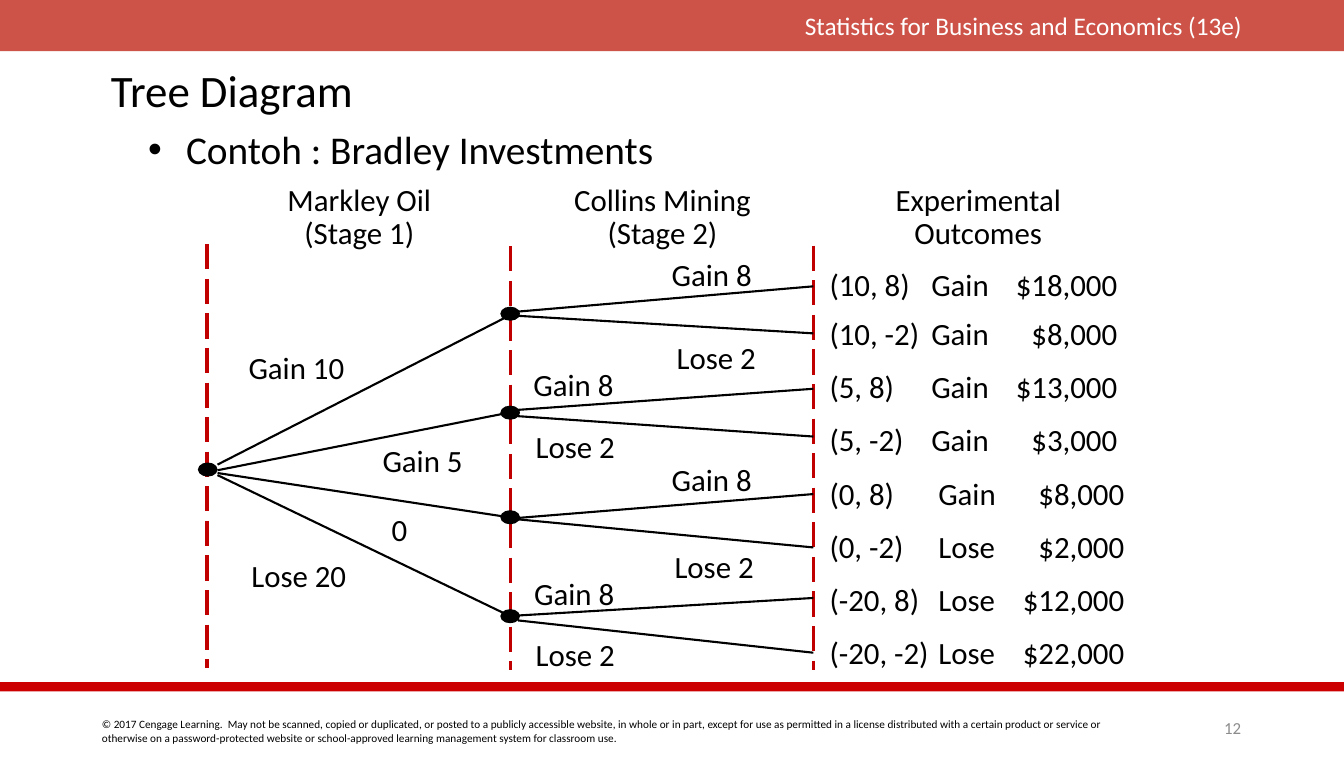
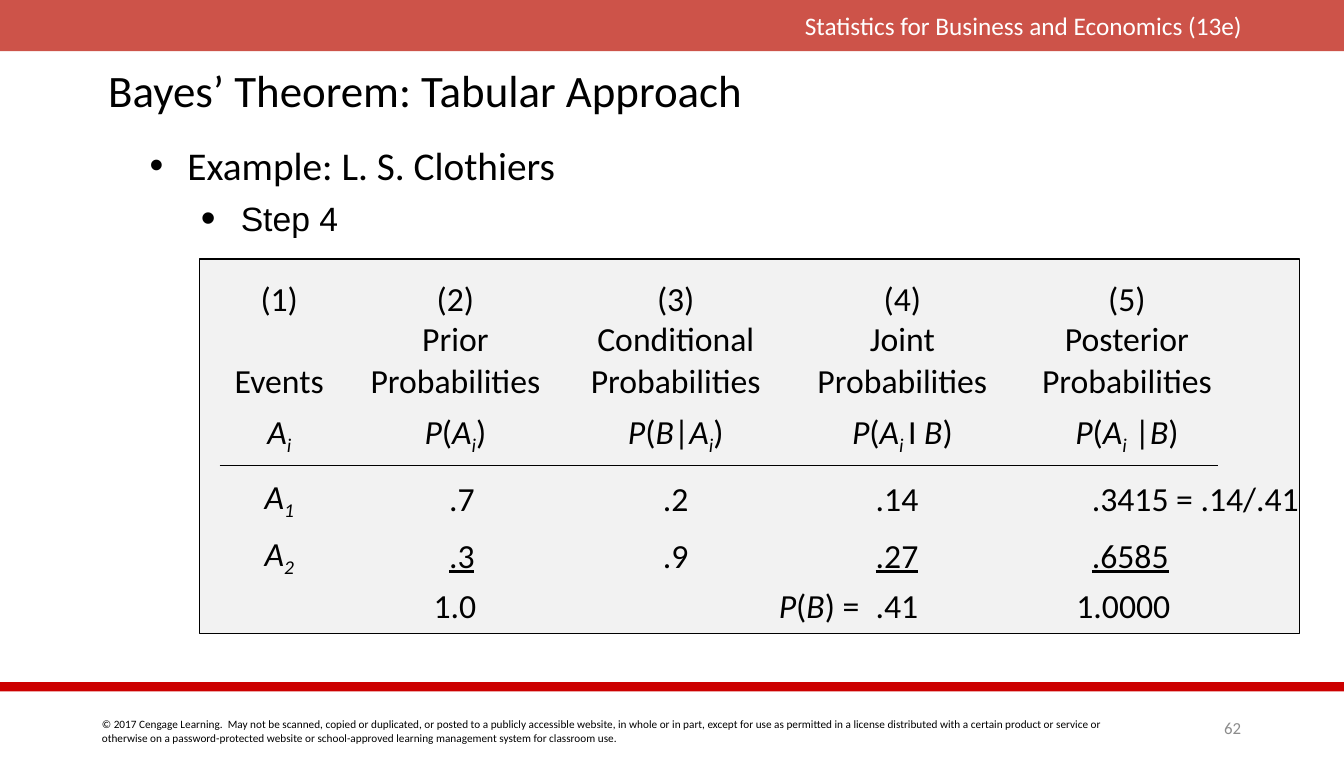
"""Build two statistics slides: a tree diagram and a Bayes table."""
from lxml.etree import SubElement
from pptx import Presentation
from pptx.dml.color import RGBColor
from pptx.enum.dml import MSO_LINE
from pptx.enum.shapes import MSO_CONNECTOR, MSO_SHAPE
from pptx.enum.text import MSO_ANCHOR, PP_ALIGN
from pptx.oxml.ns import qn
from pptx.util import Pt

BLACK = RGBColor(0x00, 0x00, 0x00)
WHITE = RGBColor(0xFF, 0xFF, 0xFF)
GRAY = RGBColor(0x8C, 0x8C, 0x8C)
PANEL = RGBColor(0xF2, 0xF2, 0xF2)
BAND = RGBColor(0xBF, 0x23, 0x17)
RULE = RGBColor(0xCC, 0x00, 0x00)
DASH = RGBColor(0xC0, 0x00, 0x00)
NO_STYLE = "{2D5ABB26-0587-4C30-8999-92F81FD0307C}"
COURSE = "Statistics for Business and Economics (13e)"
RIGHTS = (
    "© 2017 Cengage Learning.  May not be scanned, copied or duplicated, "
    "or posted to a publicly accessible website, in whole or in part, except "
    "for use as permitted in a license distributed with a certain product or "
    "service or otherwise on a password-protected website or school-approved "
    "learning management system for classroom use."
)


class Deck:
    """Hold the style and the current slide."""

    def __init__(self):
        self.prs = Presentation()
        self.prs.slide_width, self.prs.slide_height = Pt(957.6), Pt(540)

    def start(self, title, left, number):
        """Add a slide with its band, footer, title and number."""
        self.slide = self.prs.slides.add_slide(self.prs.slide_layouts[6])
        band = self.shape(MSO_SHAPE.RECTANGLE, 0, 0, 957.6, 36.5, BAND)
        color = band.element.spPr.find(f"{qn('a:solidFill')}/{qn('a:srgbClr')}")
        SubElement(color, qn("a:alpha"), val="78000")
        self.text(RIGHTS, 65.5, 507.5, 742, 27, 8)
        self.text(COURSE, 490, 3.5, 402, 29, 18, color=WHITE, align=PP_ALIGN.RIGHT)
        self.shape(MSO_SHAPE.RECTANGLE, 0, 486, 957.6, 6.5, RULE)
        self.text(title, left, 40, 820, 53, 32, mid=True, spacing=0.9)
        self.text(number, 842, 507.5, 49.5, 21.5, 12, color=GRAY,
                  align=PP_ALIGN.RIGHT, mid=True)

    def shape(self, kind, left, top, width, height, fill, edge=None):
        """Add a filled preset shape."""
        item = self.slide.shapes.add_shape(
            kind, Pt(left), Pt(top), Pt(width), Pt(height))
        item.shadow.inherit = False
        item.fill.solid()
        item.fill.fore_color.rgb = fill
        if edge is None:
            item.line.fill.background()
        else:
            item.line.color.rgb = edge
            item.line.width = Pt(1)
        return item

    def line(self, x1, y1, x2, y2, color=BLACK, width=1.5, dash=None):
        """Add a straight line."""
        item = self.slide.shapes.add_connector(
            MSO_CONNECTOR.STRAIGHT, Pt(x1), Pt(y1), Pt(x2), Pt(y2))
        SubElement(item.element.spPr, qn("a:effectLst"))
        item.line.color.rgb = color
        for key, value in {"width": Pt(width), "dash_style": dash}.items():
            setattr(item.line, key, value)

    def run(self, para, text, size, color=BLACK, **extra):
        """Add a styled run to a paragraph."""
        piece = para.add_run()
        piece.text = text
        font = piece.font
        for key, value in {"name": "Calibri", "size": Pt(size), **extra}.items():
            setattr(font, key, value)
        font.color.rgb = color
        return font

    def tabs(self, para, stops):
        """Add tab stops given as position and alignment."""
        holder = SubElement(para._p.get_or_add_pPr(), qn("a:tabLst"))
        for place, side in stops:
            SubElement(holder, qn("a:tab"), pos=str(int(Pt(place))), algn=side)

    def text(self, text, left, top, width, height, size, color=BLACK,
             align=PP_ALIGN.LEFT, mid=False, spacing=None, stops=()):
        """Add a text box with one paragraph per line."""
        box = self.slide.shapes.add_textbox(
            Pt(left), Pt(top), Pt(width), Pt(height))
        frame = box.text_frame
        frame.word_wrap = True
        frame.vertical_anchor = MSO_ANCHOR.MIDDLE if mid else MSO_ANCHOR.TOP
        for index, part in enumerate(text.split("\n")):
            para = frame.add_paragraph() if index else frame.paragraphs[0]
            for key, value in {"alignment": align, "line_spacing": spacing}.items():
                setattr(para, key, value)
            if stops:
                self.tabs(para, stops)
            self.run(para, part, size, color)
        return frame

    def bullet(self, text, left, top, size, indent=27, hang=27, scale=100, name="Calibri"):
        """Add a bulleted line."""
        para = self.text("", left, top, 560, 43, size).paragraphs[0]
        para.clear()
        props = para._p.get_or_add_pPr()
        for key, value in {"marL": indent, "indent": -hang}.items():
            props.set(key, str(int(Pt(value))))
        SubElement(props, qn("a:buSzPct"), val=str(scale * 1000))
        SubElement(props, qn("a:buFont"), typeface="Arial")
        SubElement(props, qn("a:buChar"), char="•")
        self.run(para, text, size, name=name)

    def math(self, para, text, size):
        """Write a formula with italic names and subscripts after _."""
        sub = False
        for char in text:
            if char == "_":
                sub = True
                continue
            font = self.run(para, char, size, italic=sub or char in "PAB")
            if sub:
                font._element.set("baseline", "-25000")
            sub = False

    def grid(self, left, top, widths, heights):
        """Add a plain table without style."""
        item = self.slide.shapes.add_table(
            len(heights), len(widths), Pt(left), Pt(top),
            Pt(sum(widths)), Pt(sum(heights)))
        item.element.find(f".//{qn('a:tableStyleId')}").text = NO_STYLE
        table = item.table
        table.first_row = table.horz_banding = False
        for col, width in zip(table.columns, widths):
            col.width = Pt(width)
        for row, height in zip(table.rows, heights):
            row.height = Pt(height)
        return table

    def cell(self, cell, text, left=0, right=0, tab=None, align=PP_ALIGN.CENTER,
             spacing=None, under=False):
        """Fill one table cell."""
        cell.fill.background()
        margins = {"margin_left": left, "margin_right": right,
                   "margin_top": 0, "margin_bottom": 0}
        for key, value in margins.items():
            setattr(cell, key, Pt(value))
        cell.vertical_anchor = MSO_ANCHOR.MIDDLE
        para = cell.text_frame.paragraphs[0]
        para.alignment, para.line_spacing = align, spacing
        if tab:
            self.tabs(para, [(tab, "l")])
        if "_" in text or text.startswith("P("):
            self.math(para, text, 24)
        elif text:
            self.run(para, text, 24, underline=under)


def tree(deck):
    """Draw the tree diagram slide."""
    deck.start("Tree Diagram", 72, "12")
    deck.bullet("Contoh : Bradley Investments", 98.5, 85.5, 28)
    for x, y in ((147.5, 174), (363.5, 175.5), (579.5, 175)):
        deck.line(x, y, x, y + 302, DASH, 2.25, MSO_LINE.LONG_DASH)
    nodes = (
        (223.5, 331, 225, (222, 204), (225, 237.5)),
        (294, 335, 294, (292, 277), (296.5, 311)),
        (368.5, 337, 368.5, (369, 352), (370, 390)),
        (439, 338.5, 438.5, (438.5, 426), (442, 465)),
    )
    for y, begin, end, *leaves in nodes:
        deck.line(155, begin, 362.5, end)
        for near, far in leaves:
            deck.line(369, near, 579.5, far)
    for x, y in [(148, 334.5)] + [(363.5, node[0]) for node in nodes]:
        deck.shape(MSO_SHAPE.OVAL, x - 6.5, y - 4.5, 13, 9, BLACK, BLACK)
    labels = (
        ("Gain 10", 170, 245), ("Gain 5", 265.5, 311),
        ("0", 272, 360.5), ("Lose 20", 172, 393),
        ("Gain 8", 471.5, 178.5), ("Lose 2", 475, 237.5),
        ("Gain 8", 373, 257), ("Lose 2", 374.5, 301),
        ("Gain 8", 471.5, 324.5), ("Lose 2", 473.5, 386.5),
        ("Gain 8", 373.5, 405.5), ("Lose 2", 374.5, 449.5),
    )
    for label, x, y in labels:
        deck.text(label, x, y, 90, 34, 22)
    heads = (("Markley Oil\n(Stage 1)", 256), ("Collins Mining\n(Stage 2)", 472),
             ("Experimental\nOutcomes", 697))
    for head, mid in heads:
        deck.text(head, mid - 90, 117, 180, 77, 22, align=PP_ALIGN.CENTER,
                  mid=True, spacing=0.9)
    pays = (
        ("(10, 8)", "Gain", "$18,000"), ("(10, -2)", "Gain", "$8,000"),
        ("(5, 8)", "Gain", "$13,000"), ("(5, -2)", "Gain", "$3,000"),
        ("(0, 8)", "Gain", "$8,000"), ("(0, -2)", "Lose", "$2,000"),
        ("(-20, 8)", "Lose", "$12,000"), ("(-20, -2)", "Lose", "$22,000"),
    )
    for index, pay in enumerate(pays):
        y = 184 + 37.9 * index - (3 if index else 0)
        shift = 5 if index > 3 else 0
        deck.text("\t".join(pay), 584, y, 280, 37, 22, mid=True,
                  stops=[(72.5 + shift, "l"), (205 + shift, "r")])


def bayes(deck):
    """Draw the Bayes table slide."""
    deck.start("Bayes’ Theorem: Tabular Approach", 70, "62")
    deck.bullet("Example: L. S. Clothiers", 99.5, 97, 28)
    deck.bullet("Step 4", 100, 137.5, 24, 64.5, 28.5, 125, "Arial")
    deck.shape(MSO_SHAPE.RECTANGLE, 142, 184.5, 784, 267, PANEL, BLACK)
    deck.line(156.5, 331.5, 867.5, 331.5, width=1)
    heads = (
        ("(1)", "(2)", "(3)", "(4)", "(5)"),
        ("", "Prior", "Conditional", "Joint", "Posterior"),
        ("Events",) + ("Probabilities",) * 4,
        ("A_i", "P(A_i)", "P(B|A_i)", "P(A_i_ I B)", "P(A_i |B)"),
    )
    values = (
        ("A_1", "\t.7", ".2", ".14", "\t.3415 = .14/.41"),
        ("A_2", "\t.3", ".9", ".27", "\t.6585"),
        ("", "1.0", "", "P(B) =\t.41", "1.0000"),
    )
    lefts = (0, 71, 0, 72, 33)
    table = deck.grid(160, 200.5, (78, 173, 141, 182, 200),
                      (27, 30, 30, 45, 48, 31, 38))
    for row, texts in enumerate(heads):
        for col, text in enumerate(texts):
            deck.cell(table.cell(row, col), text, right=62 if col == 4 else 0,
                      spacing=0.9 if row == 0 else None)
    for row, texts in enumerate(values):
        for col, text in enumerate(texts):
            total = text.startswith("P(")
            left = 3 if total else lefts[col]
            deck.cell(table.cell(row + len(heads), col), text, left,
                      tab=69 if total else 11 if "\t" in text else None,
                      align=PP_ALIGN.LEFT if left else PP_ALIGN.CENTER,
                      under=row == 1 and left > 0)


def main():
    """Build and save the deck."""
    deck = Deck()
    tree(deck)
    bayes(deck)
    deck.prs.save("out.pptx")


if __name__ == "__main__":
    main()
